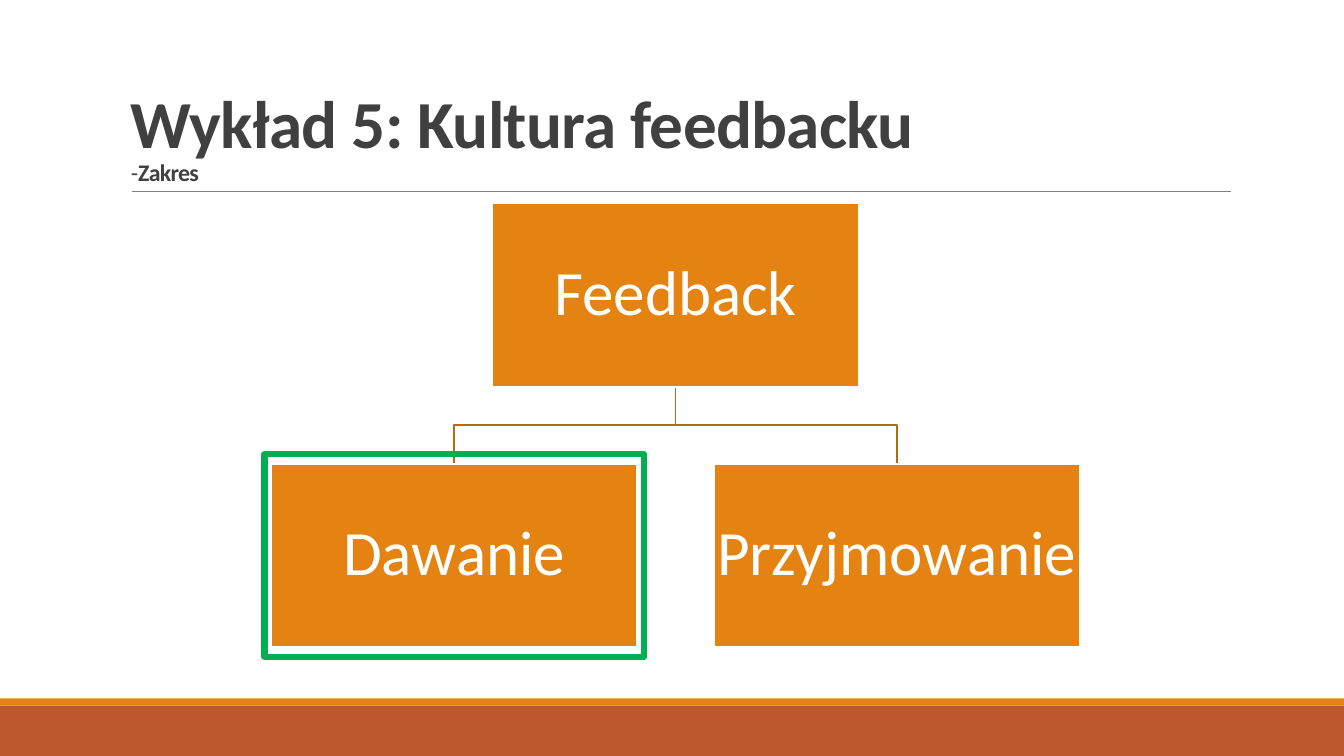
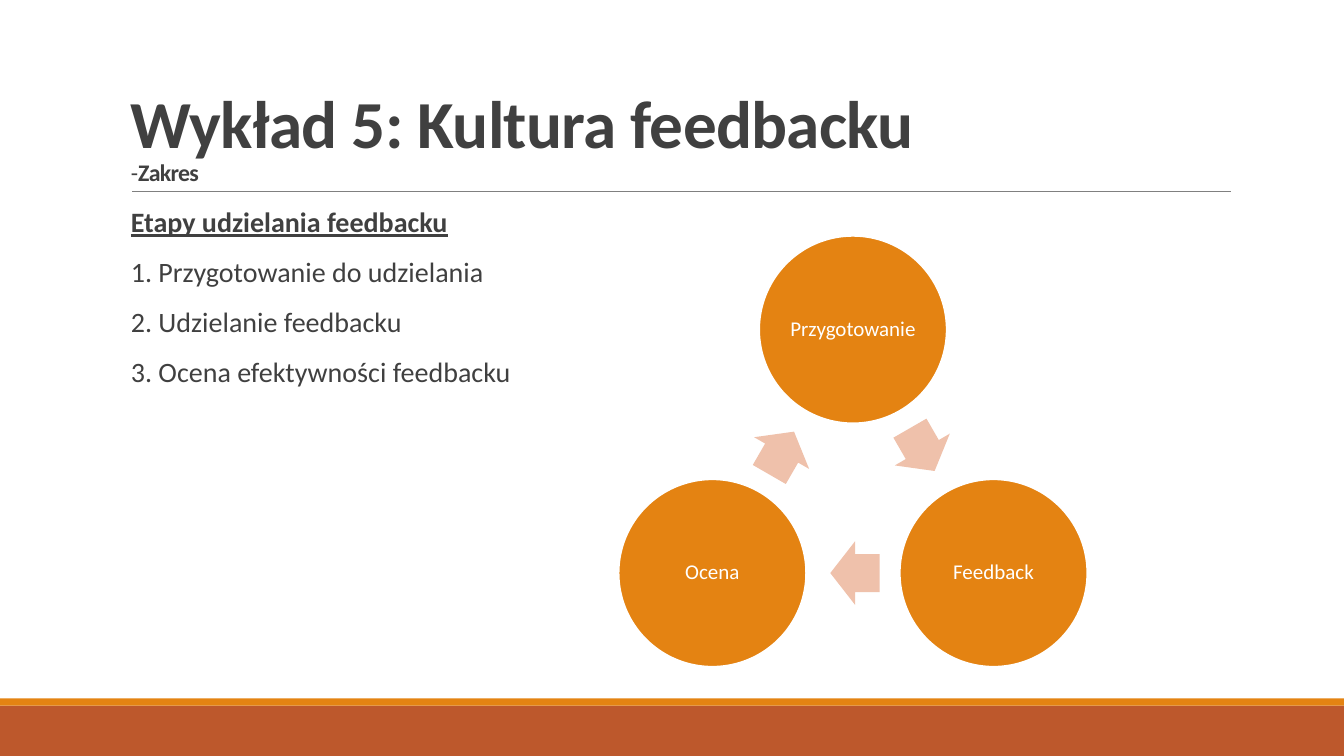
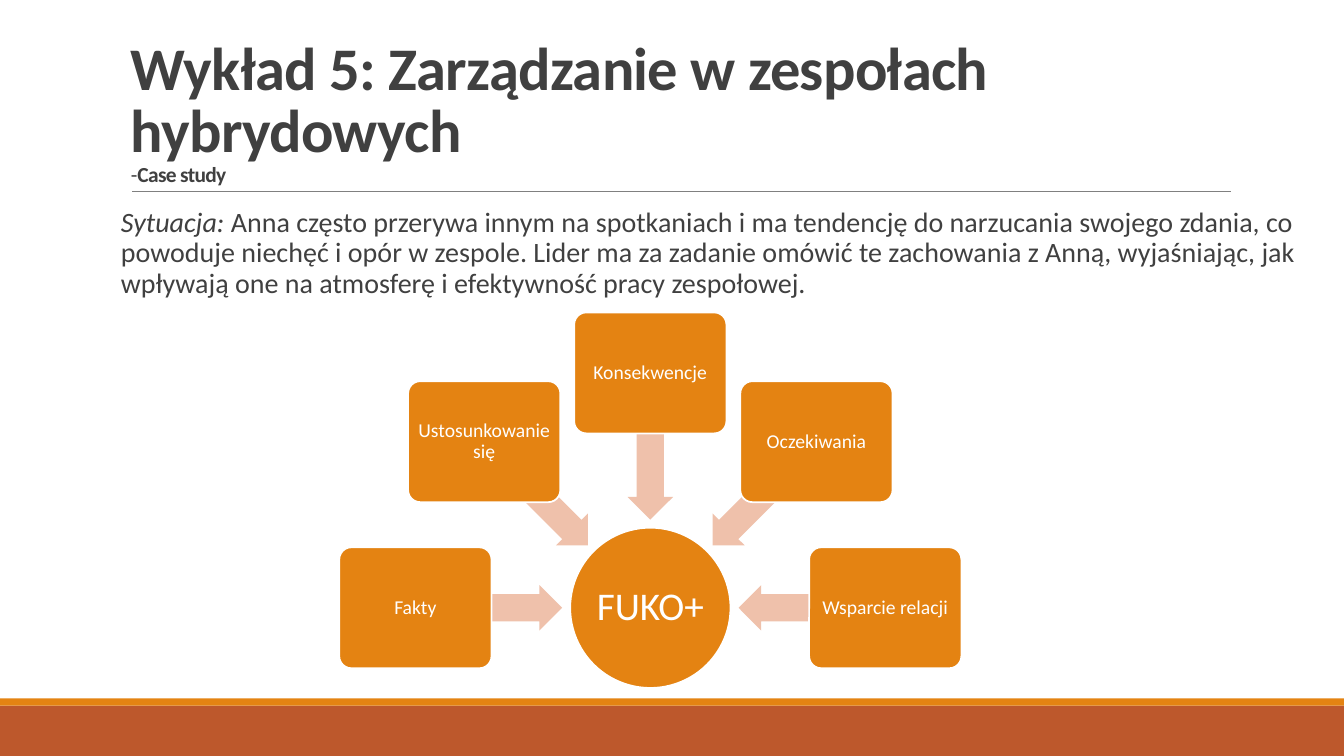
import math

import lxml.etree
import pptx
import pptx.dml.color
import pptx.enum.shapes
import pptx.enum.text
import pptx.oxml.ns
import pptx.util

Inches = pptx.util.Inches
Pt = pptx.util.Pt
SHAPE = pptx.enum.shapes.MSO_SHAPE
ANCHOR = pptx.enum.text.MSO_ANCHOR
ALIGN = pptx.enum.text.PP_ALIGN

FONT = "Calibri"
COLORS = {
    "orange": "E48312",
    "rust": "BD582C",
    "peach": "EFC1AB",
    "branch": "B7690E",
    "green": "00B050",
    "rule": "808080",
    "text": "404040",
    "white": "FFFFFF",
}
SLIDE_WIDTH, SLIDE_HEIGHT = 13.33, 7.5
BANDS = [("rust", 7, 0.5), ("orange", 6.93, 0.07)]

CULTURE_TITLE = ("Wykład 5: Kultura feedbacku", "Zakres", 48, 17)
CASE_TITLE = ("Wykład 5: Zarządzanie w zespołach hybrydowych", "Case study", 43.2, 15.3)

TREE_ROOT = "Feedback"
TREE_CHILDREN = ["Dawanie", "Przyjmowanie"]

STAGES = [
    [("Etapy udzielania feedbacku", {"bold": True, "underline": True})],
    [("1. Przygotowanie do udzielania", {})],
    [("2. Udzielanie feedbacku", {})],
    [("3. Ocena efektywności feedbacku", {})],
]
CYCLE = ["Przygotowanie", "Feedback", "Ocena"]

SITUATION = [[
    ("Sytuacja:", {"italic": True}),
    (" Anna często przerywa innym na spotkaniach i ma tendencję do narzucania "
     "swojego zdania, co powoduje niechęć i opór w zespole. Lider ma za zadanie "
     "omówić te zachowania z Anną, wyjaśniając, jak wpływają one na atmosferę "
     "i efektywność pracy zespołowej.", {}),
]]
HUB = "FUKO+"
SPOKES = ["Fakty", "Ustosunkowanie się", "Konsekwencje", "Oczekiwania", "Wsparcie relacji"]


def color(name):
    return pptx.dml.color.RGBColor.from_string(COLORS[name])


def polar(center, radius, angle):
    radians = math.radians(angle)
    return center[0] + radius * math.cos(radians), center[1] + radius * math.sin(radians)


def style_shape(shape, fill=None, line=None, line_width=1.25):
    shape.shadow.inherit = False
    if fill:
        shape.fill.solid()
        shape.fill.fore_color.rgb = color(fill)
    else:
        shape.fill.background()
    if line:
        shape.line.color.rgb = color(line)
        shape.line.width = Pt(line_width)
    else:
        shape.line.fill.background()


def add_shape(slide, kind, center, size, adjustments=(), rotation=0, **style):
    left, top = center[0] - size[0] / 2, center[1] - size[1] / 2
    shape = slide.shapes.add_shape(
        kind, Inches(left), Inches(top), Inches(size[0]), Inches(size[1]))
    for index, value in enumerate(adjustments):
        shape.adjustments[index] = value
    shape.rotation = rotation
    style_shape(shape, **style)
    return shape


def add_arrow(slide, kind, center, size, rotation):
    add_shape(slide, kind, center, size, (0.6, 0.5), rotation, fill="peach")


def add_run(paragraph, text, size, ink="text", **flags):
    run = paragraph.add_run()
    run.text = text
    run.font.name = FONT
    run.font.size = Pt(size)
    run.font.color.rgb = color(ink)
    for name, value in flags.items():
        setattr(run.font, name, value)
    return run


def set_insets(frame, horizontal, vertical):
    frame.margin_left = frame.margin_right = Inches(horizontal)
    frame.margin_top = frame.margin_bottom = Inches(vertical)


def add_node(slide, kind, text, center, size, font_size, inset, adjustments=()):
    node = add_shape(slide, kind, center, size, adjustments, fill="orange", line="white")
    frame = node.text_frame
    frame.word_wrap = True
    frame.vertical_anchor = ANCHOR.MIDDLE
    set_insets(frame, inset, inset)
    paragraph = frame.paragraphs[0]
    paragraph.alignment = ALIGN.CENTER
    paragraph.line_spacing = 0.9
    add_run(paragraph, text, font_size, "white")


def add_text_frame(slide, left, top, width, height):
    box = slide.shapes.add_textbox(Inches(left), Inches(top), Inches(width), Inches(height))
    box.text_frame.word_wrap = True
    return box.text_frame


def add_title(slide, heading, topic, heading_size, topic_size):
    frame = add_text_frame(slide, 1.2, 0.31, 11, 1.59)
    frame.vertical_anchor = ANCHOR.BOTTOM
    paragraph = frame.paragraphs[0]
    paragraph.line_spacing = 0.85
    runs = [add_run(paragraph, heading, heading_size, bold=True)]
    paragraph.add_line_break()
    runs.append(add_run(paragraph, "-", topic_size, bold=False))
    runs.append(add_run(paragraph, topic, topic_size, bold=True))
    for run in runs:
        run._r.get_or_add_rPr().set("spc", "-50")


def add_body(slide, paragraphs, width, height, indent=0):
    frame = add_text_frame(slide, 1.2, 2.02, width, height)
    set_insets(frame, 0, 0.05)
    frame.margin_left = Inches(indent)
    for index, runs in enumerate(paragraphs):
        paragraph = frame.add_paragraph() if index else frame.paragraphs[0]
        paragraph.line_spacing = 0.9
        paragraph.space_before = Pt(12)
        paragraph.space_after = Pt(2)
        for text, flags in runs:
            add_run(paragraph, text, 20, **flags)


def add_base_slide(presentation, title):
    slide = presentation.slides.add_slide(presentation.slide_layouts[6])
    for fill, top, height in BANDS:
        add_shape(slide, SHAPE.RECTANGLE, (SLIDE_WIDTH / 2, top + height / 2),
                  (SLIDE_WIDTH, height), fill=fill)
    rule = slide.shapes.add_connector(
        pptx.enum.shapes.MSO_CONNECTOR.STRAIGHT,
        Inches(1.31), Inches(1.9), Inches(12.21), Inches(1.9))
    rule.line.color.rgb = color("rule")
    rule.line.width = Pt(0.5)
    lxml.etree.SubElement(rule._element.spPr, pptx.oxml.ns.qn("a:effectLst"))
    add_title(slide, *title)
    return slide


def add_branch(slide, start, end):
    middle = (start[1] + end[1]) / 2
    points = [start, (start[0], middle), (end[0], middle), end]
    points = [(Inches(x), Inches(y)) for x, y in points]
    builder = slide.shapes.build_freeform(*points[0])
    builder.add_line_segments(points[1:], close=False)
    style_shape(builder.convert_to_shape(), line="branch")


def build_tree_slide(presentation):
    slide = add_base_slide(presentation, CULTURE_TITLE)
    size = (3.63, 1.82)
    root = (6.7, 2.93)
    spread, child_y = 4.39, 5.51
    first_x = root[0] - spread * (len(TREE_CHILDREN) - 1) / 2
    children = [(first_x + spread * index, child_y) for index in range(len(TREE_CHILDREN))]
    for x, y in children:
        add_branch(slide, (root[0], root[1] + size[1] / 2), (x, y - size[1] / 2))
    for text, center in zip([TREE_ROOT] + TREE_CHILDREN, [root] + children):
        add_node(slide, SHAPE.RECTANGLE, text, center, size, 45, 0.03)
    add_shape(slide, SHAPE.RECTANGLE, children[0], (3.76, 2.01),
              line="green", line_width=4.5)


def build_cycle_slide(presentation):
    slide = add_base_slide(presentation, CULTURE_TITLE)
    add_body(slide, STAGES, 11, 4.4, indent=0.1)
    center, radius, setback = (8.46, 4.88), 1.61, 0.02
    step = 360 / len(CYCLE)
    for index, text in enumerate(CYCLE):
        angle = -90 + step * index
        add_node(slide, SHAPE.OVAL, text, polar(center, radius, angle), (1.86, 1.86), 15, 0.02)
        halfway = angle + step / 2
        heading = halfway + 90
        midpoint = polar(center, radius * math.cos(math.radians(step / 2)), halfway)
        add_arrow(slide, SHAPE.RIGHT_ARROW, polar(midpoint, -setback, heading),
                  (0.49, 0.63), heading)


def build_hub_slide(presentation):
    slide = add_base_slide(presentation, CASE_TITLE)
    add_body(slide, SITUATION, 11.94, 5.17)
    center = (6.45, 6.03)
    add_node(slide, SHAPE.OVAL, HUB, center, (1.59, 1.59), 28, 0.02)
    step = 180 / (len(SPOKES) - 1)
    for index, text in enumerate(SPOKES):
        angle = 180 + step * index
        add_arrow(slide, SHAPE.LEFT_ARROW, polar(center, 1.6, angle), (1.45, 0.45), angle % 360)
        add_node(slide, SHAPE.ROUNDED_RECTANGLE, text, polar(center, 2.33, angle),
                 (1.51, 1.2), 14, 0.03, (0.1,))


def main():
    presentation = pptx.Presentation()
    presentation.slide_width = Inches(SLIDE_WIDTH)
    presentation.slide_height = Inches(SLIDE_HEIGHT)
    build_tree_slide(presentation)
    build_cycle_slide(presentation)
    build_hub_slide(presentation)
    presentation.save("out.pptx")


if __name__ == "__main__":
    main()
